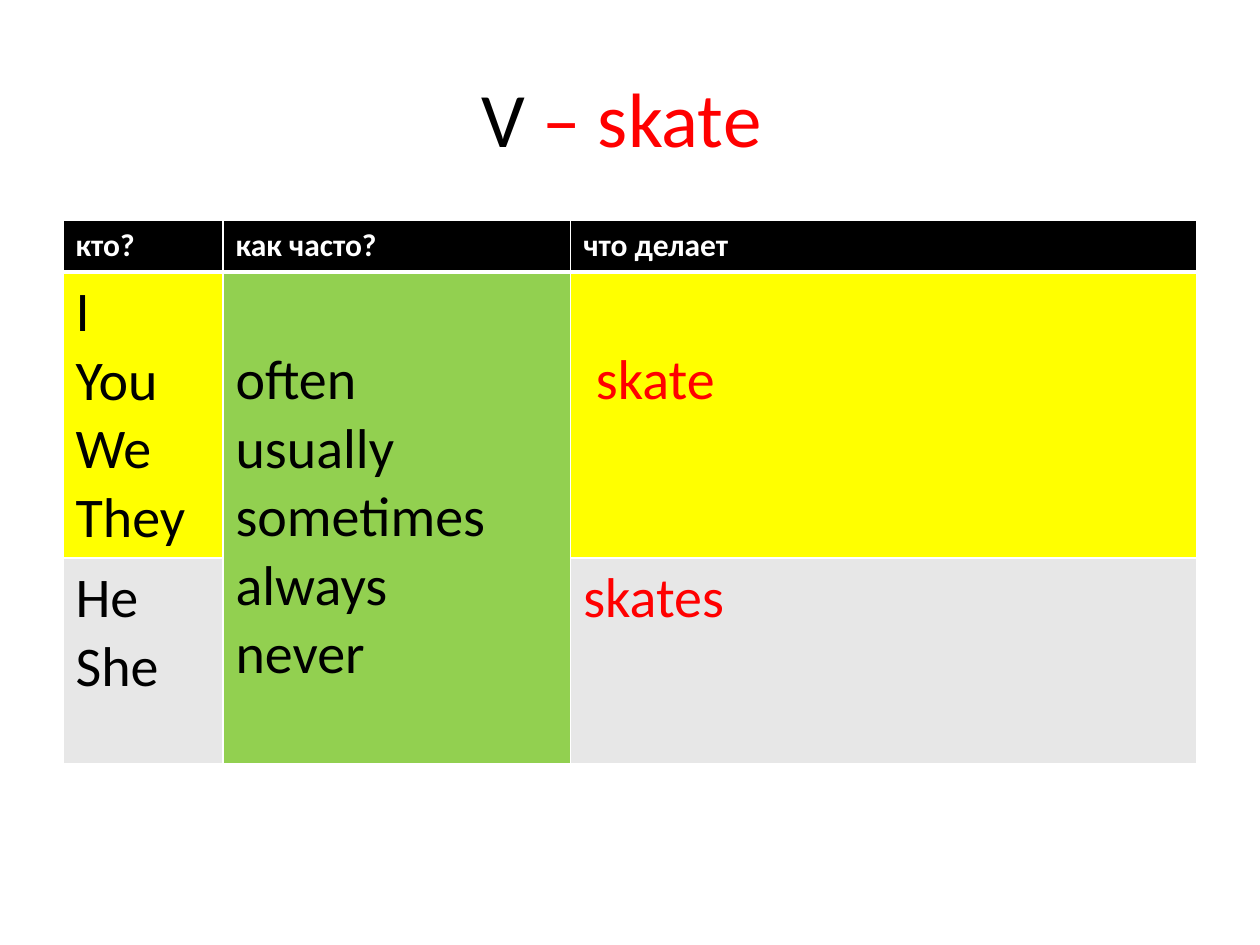
import pptx
import pptx.dml.color
import pptx.enum.text
import pptx.oxml
import pptx.oxml.ns
import pptx.util

Inches, Pt = pptx.util.Inches, pptx.util.Pt
RGBColor = pptx.dml.color.RGBColor
BLACK = RGBColor(0x00, 0x00, 0x00)
WHITE = RGBColor(0xFF, 0xFF, 0xFF)
RED = RGBColor(0xFF, 0x00, 0x00)
YELLOW = RGBColor(0xFF, 0xFF, 0x00)
GREEN = RGBColor(0x92, 0xD0, 0x50)
GREY = RGBColor(0xE7, 0xE7, 0xE7)

LINE = Inches(0.54)  # height of one line of body text


class Deck:
    font = "Calibri"
    head = {"size": Pt(18), "bold": True}
    body = {"size": Pt(32), "bold": False}
    title_format = {"size": Pt(44), "bold": False}

    def __init__(self, width, height):
        self.prs = pptx.Presentation()
        self.prs.slide_width, self.prs.slide_height = Inches(width), Inches(height)
        self.s = self.prs.slides.add_slide(self.prs.slide_layouts[6])

    def run(self, p, text, color, style):
        r = p.add_run()
        r.text = text
        for name, value in {"name": self.font, **style}.items():
            setattr(r.font, name, value)
        r.font.color.rgb = color

    def title(self, box, runs):
        sp = self.s.shapes.add_textbox(*map(Inches, box))
        tf = sp.text_frame
        tf.word_wrap = True
        tf.vertical_anchor = pptx.enum.text.MSO_ANCHOR.MIDDLE
        p = tf.paragraphs[0]
        p.alignment = pptx.enum.text.PP_ALIGN.CENTER
        for text, color in runs:
            self.run(p, text, color, self.title_format)

    def table(self, left, top, widths, heights):
        box = left, top, sum(widths), sum(heights)
        table = self.s.shapes.add_table(len(heights), len(widths), *map(Inches, box)).table
        table.horz_banding = False
        for col, width in zip(table.columns, widths):
            col.width = Inches(width)
        for row, height in zip(table.rows, heights):
            row.height = Inches(height)
        return table

    def cell(self, cell, lines, color, fill, style, margins=None):
        for name, value in (margins or {}).items():
            setattr(cell, name, value)
        tf = cell.text_frame
        for i, line in enumerate(lines):
            p = tf.add_paragraph() if i else tf.paragraphs[0]
            self.run(p, line, color, style)
        cell.fill.solid()
        cell.fill.fore_color.rgb = fill

    def borders(self, cell, widths):
        # Border lines come before the fill in the cell properties
        tcPr = cell.fill._xPr
        for i, (side, width) in enumerate(widths.items()):
            tcPr.insert(i, pptx.oxml.parse_xml(
                f'<a:{side} {pptx.oxml.ns.nsdecls("a")} w="{Pt(width)}">'
                f'<a:solidFill><a:srgbClr val="{WHITE}"/></a:solidFill></a:{side}>'))


def main():
    deck = Deck(10, 7.5)

    # Title
    deck.title((0.5, 0.3, 9, 1.25), [("V", BLACK), (" – skate ", RED)])

    # Table grid
    table = deck.table(0.5, 1.75, (1.27, 2.76, 4.97), (0.41, 2.27, 1.63))
    table.cell(1, 1).merge(table.cell(2, 1))

    # Header row
    for col, text in enumerate(("кто?", "как часто?", "что делает")):
        deck.cell(table.cell(0, col), [text], WHITE, BLACK, deck.head)

    # Pronouns, adverbs and verb forms
    lower = {"margin_top": Inches(0.05) + LINE}
    body = [
        (1, 0, ["I", "You", "We", "They"], BLACK, YELLOW, {}),
        (1, 1, ["often", "usually", "sometimes", "always", "never"], BLACK, GREEN, lower),
        (1, 2, ["skate"], RED, YELLOW, {**lower, "margin_left": Inches(0.2)}),
        (2, 0, ["He", "She"], BLACK, GREY, {}),
        (2, 2, ["skates"], RED, GREY, {}),
    ]
    for row, col, lines, color, fill, margins in body:
        deck.cell(table.cell(row, col), lines, color, fill, deck.body, margins)

    # White grid lines, thicker below the header
    for row in range(3):
        for col in range(3):
            deck.borders(table.cell(row, col), {
                "lnL": 1, "lnR": 1, "lnT": 3 if row == 1 else 1, "lnB": 1 if row else 3})

    deck.prs.save("out.pptx")


if __name__ == "__main__":
    main()
